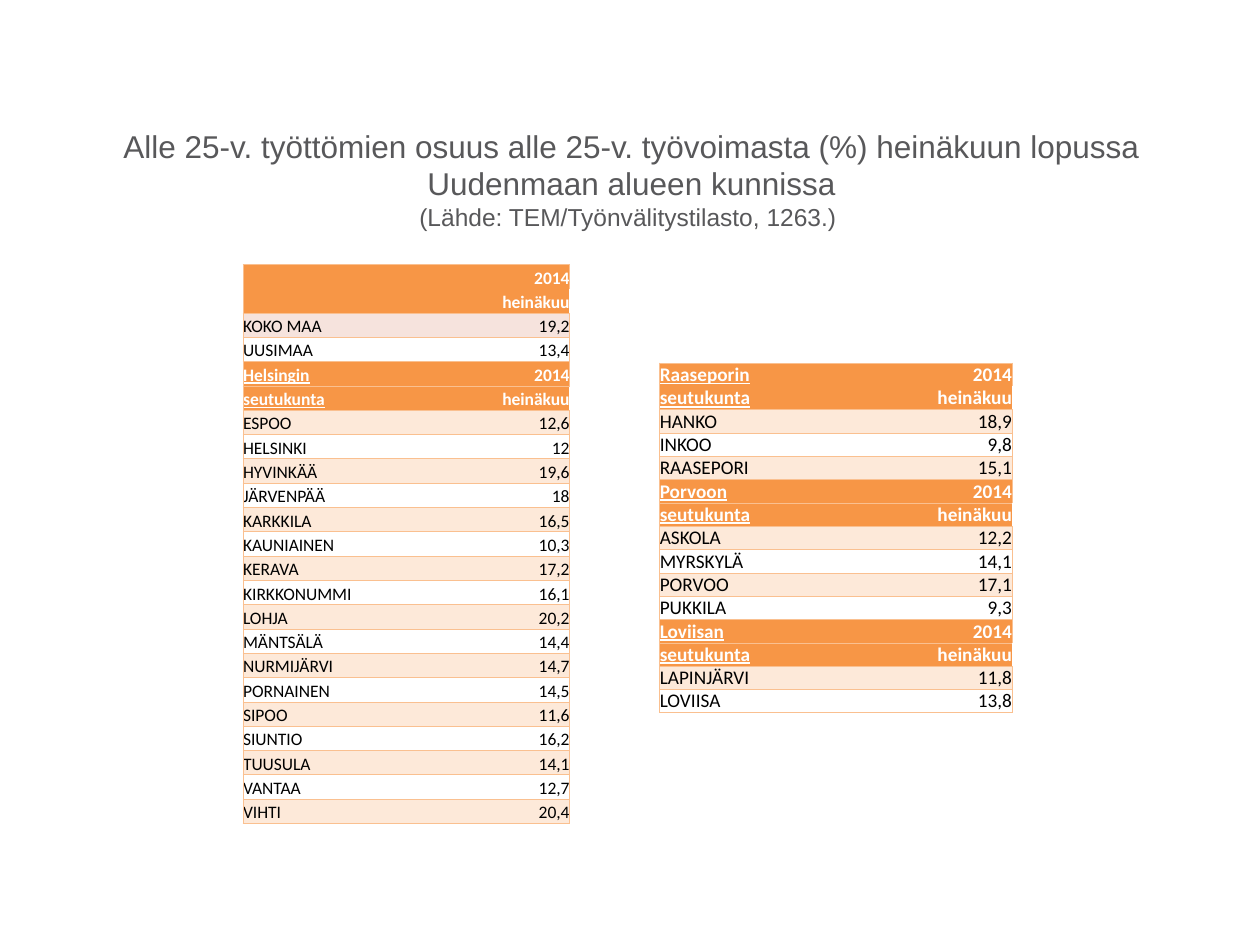
from lxml import etree
from pptx import Presentation
from pptx import util as u
from pptx.dml.color import RGBColor
from pptx.enum import text
from pptx.oxml.ns import qn

WHITE = RGBColor(0xFF, 0xFF, 0xFF)
BLACK = RGBColor(0, 0, 0)
GREY = RGBColor(0x58, 0x58, 0x5A)
ORANGE = RGBColor(0xF7, 0x96, 0x46)
PEACH = RGBColor(0xFD, 0xE9, 0xD9)
PINK = RGBColor(0xF6, 0xE3, 0xDD)
EDGE = RGBColor(0xFA, 0xC0, 0x90)
PLAIN = "{2D5ABB26-0587-4C30-8999-92F81FD0307C}"

HEAD = {"name": "Calibri", "bold": True}
BODY = {"name": "Calibri", "bold": False}

LEFT = [
    ("", PINK, [("KOKO MAA", "19,2"), ("UUSIMAA", "13,4")]),
    ("Helsingin", PEACH, [
        ("ESPOO", "12,6"), ("HELSINKI", "12"), ("HYVINKÄÄ", "19,6"),
        ("JÄRVENPÄÄ", "18"), ("KARKKILA", "16,5"), ("KAUNIAINEN", "10,3"),
        ("KERAVA", "17,2"), ("KIRKKONUMMI", "16,1"), ("LOHJA", "20,2"),
        ("MÄNTSÄLÄ", "14,4"), ("NURMIJÄRVI", "14,7"), ("PORNAINEN", "14,5"),
        ("SIPOO", "11,6"), ("SIUNTIO", "16,2"), ("TUUSULA", "14,1"),
        ("VANTAA", "12,7"), ("VIHTI", "20,4")]),
]
RIGHT = [
    ("Raaseporin", PEACH, [
        ("HANKO", "18,9"), ("INKOO", "9,8"), ("RAASEPORI", "15,1")]),
    ("Porvoon", PEACH, [
        ("ASKOLA", "12,2"), ("MYRSKYLÄ", "14,1"), ("PORVOO", "17,1"),
        ("PUKKILA", "9,3")]),
    ("Loviisan", PEACH, [("LAPINJÄRVI", "11,8"), ("LOVIISA", "13,8")]),
]


def style(font, form, color):
    for key, val in form.items():
        setattr(font, key, val)
    font.color.rgb = color


def add_title(slide, main, source):
    box = slide.shapes.add_textbox(u.Cm(1.3), u.Cm(2.72), u.Cm(22.86), u.Cm(1.78))
    frame = box.text_frame
    frame.word_wrap = True
    frame.vertical_anchor = text.MSO_ANCHOR.MIDDLE
    para = frame.paragraphs[0]
    para.alignment = text.PP_ALIGN.CENTER
    for words, size in ((main, 18), (source, 14)):
        if para.runs:
            para.add_line_break()
        run = para.add_run()
        run.text = words
        style(run.font, {"name": "Arial", "size": u.Pt(size)}, GREY)


def add_edges(cell, sides):
    props = cell._tc.get_or_add_tcPr()
    for side in sides:
        line = etree.SubElement(props, qn(f"a:ln{side}"), w=str(u.Pt(0.5)))
        fill = etree.SubElement(line, qn("a:solidFill"))
        etree.SubElement(fill, qn("a:srgbClr"), val=str(EDGE))


def fill_cell(cell, words, form, color, fill, sides):
    add_edges(cell, sides)
    if fill:
        cell.fill.solid()
        cell.fill.fore_color.rgb = fill
    else:
        cell.fill.background()
    for side in ("left", "right", "top", "bottom"):
        setattr(cell, f"margin_{side}", 0)
    cell.vertical_anchor = text.MSO_ANCHOR.BOTTOM
    para = cell.text_frame.paragraphs[0]
    if words:
        run = para.add_run()
        run.text = words
        style(run.font, form, color)
    else:
        etree.SubElement(para._p, qn("a:endParaRPr"), sz=str(int(form["size"].pt * 100)))


def list_rows(blocks):
    rows = []
    for name, band, towns in blocks:
        second = "seutukunta" if name else ""
        rows.append((name, "2014", HEAD, WHITE, ORANGE, "T"))
        rows.append((second, "heinäkuu", HEAD, WHITE, ORANGE, "B"))
        for num, (town, share) in enumerate(towns):
            fill = None if num % 2 else band
            rows.append((town, share, BODY, BLACK, fill, "TB"))
    return rows


def add_grid(slide, blocks, left, top, widths, high, size):
    rows = list_rows(blocks)
    frame = slide.shapes.add_table(
        len(rows), 2, u.Cm(left), u.Cm(top), u.Cm(sum(widths)), u.Cm(high * len(rows)))
    table = frame.table
    table.first_row = table.horz_banding = False
    table._tbl.tblPr.find(qn("a:tableStyleId")).text = PLAIN
    for col, width in zip(table.columns, widths):
        col.width = u.Cm(width)
    for num, (name, share, form, color, fill, sides) in enumerate(rows):
        table.rows[num].height = u.Cm(high)
        form = {**form, "size": u.Pt(size)}
        label, value = table.cell(num, 0), table.cell(num, 1)
        lined = {**form, "underline": form["bold"]}
        fill_cell(label, name, lined, color, fill, "L" + sides)
        outer = "" if sides == "B" else "R"
        fill_cell(value, share, form, color, fill, outer + sides)
        value.text_frame.paragraphs[0].alignment = text.PP_ALIGN.RIGHT
    if not rows[0][0]:
        table.cell(0, 0).merge(table.cell(1, 0))


def main():
    deck = Presentation()
    deck.slide_width, deck.slide_height = u.Cm(25.4), u.Cm(19.05)
    slide = deck.slides.add_slide(deck.slide_layouts[6])
    add_title(
        slide,
        "Alle 25-v. työttömien osuus alle 25-v. työvoimasta (%) heinäkuun lopussa "
        "Uudenmaan alueen kunnissa",
        "(Lähde: TEM/Työnvälitystilasto, 1263.) ")
    add_grid(slide, LEFT, 4.9, 5.33, (3.76, 2.82), 0.49, 10)
    add_grid(slide, RIGHT, 13.3, 7.32, (4.06, 3.04), 0.47, 11)
    deck.save("out.pptx")


if __name__ == "__main__":
    main()
